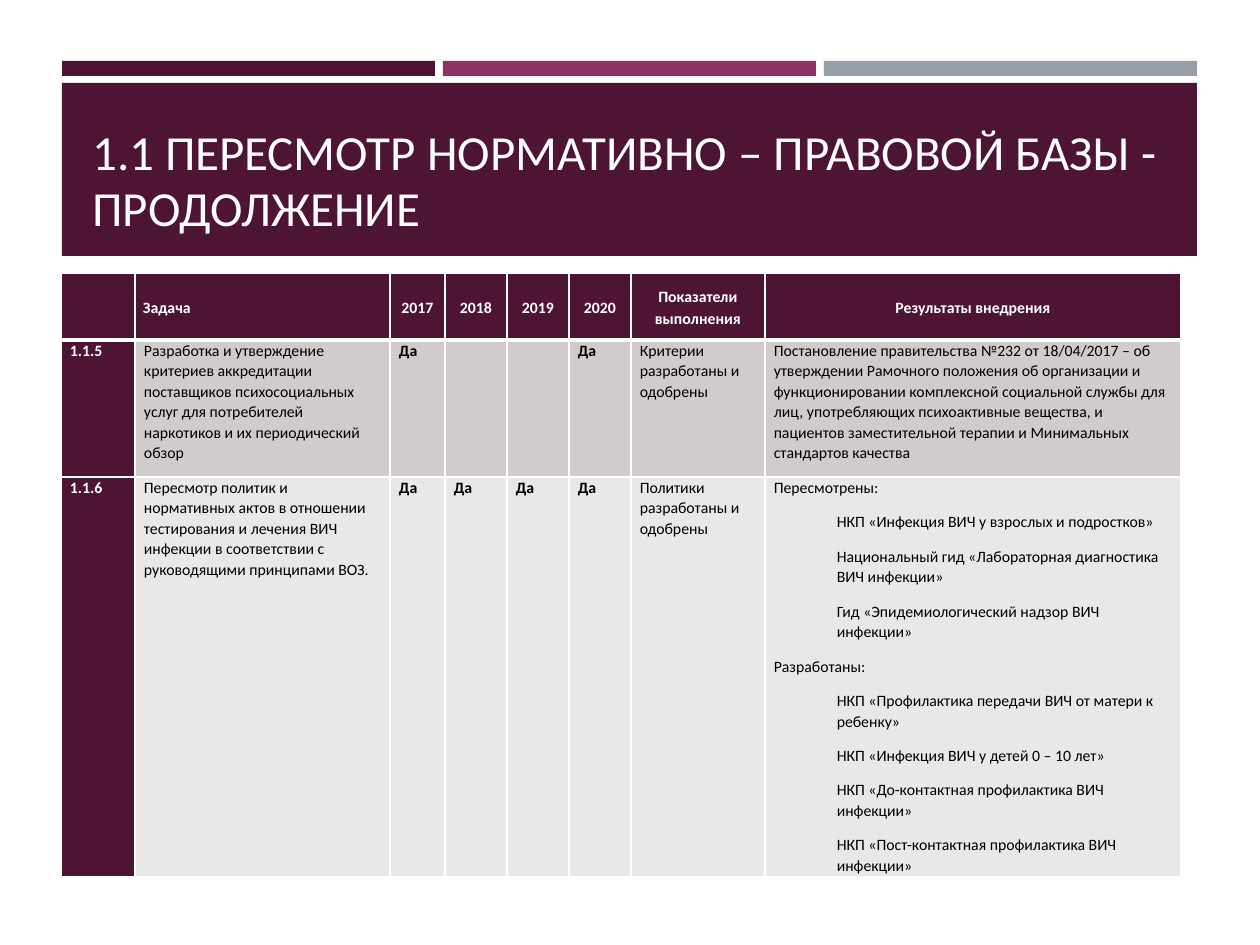
from dataclasses import dataclass

from lxml.etree import SubElement
from pptx import Presentation
from pptx.dml.color import RGBColor
from pptx.enum.shapes import MSO_SHAPE as Shape
from pptx.enum.text import MSO_ANCHOR as Anchor, PP_ALIGN as Align
from pptx.oxml.ns import qn
from pptx.util import Emu, Pt

PX = 914400 // 126


@dataclass(frozen=True)
class Theme:
    plum: str = "4D1434"
    magenta: str = "903163"
    grey: str = "969FA7"
    white: str = "FFFFFF"
    black: str = "000000"
    band_dark: str = "D0CCCE"
    band_light: str = "E9E7E8"
    font: str = "Calibri"
    title_size: int = 28
    table_size: int = 9


class SlideBuilder:
    """Draws themed elements on one slide, with lengths in px."""

    def __init__(self, theme, slide):
        self.theme = theme
        self.slide = slide

    def bar(self, left, top, width, height, color):
        bar = self.slide.shapes.add_shape(
            Shape.RECTANGLE, *(Emu(n * PX) for n in (left, top, width, height)))
        bar.shadow.inherit = False
        bar.fill.solid()
        bar.fill.fore_color.rgb = RGBColor.from_string(color)
        bar.line.fill.background()

    def style(self, paragraph, size, color, bold=False):
        paragraph.font.name = self.theme.font
        paragraph.font.size = Pt(size)
        paragraph.font.bold = bold
        paragraph.font.color.rgb = RGBColor.from_string(color)

    def title(self, left, top, width, height, text):
        box = self.slide.shapes.add_textbox(
            *(Emu(n * PX) for n in (left, top, width, height)))
        frame = box.text_frame
        frame.word_wrap = True
        frame.vertical_anchor = Anchor.BOTTOM
        heading = frame.paragraphs[0]
        heading.text = text
        heading.line_spacing = 0.95
        self.style(heading, self.theme.title_size, self.theme.white)

    def table(self, left, top, widths, heights, rows):
        table = self.slide.shapes.add_table(
            len(heights), len(widths), Emu(left * PX), Emu(top * PX),
            Emu(sum(widths) * PX), Emu(sum(heights) * PX)).table
        for column, width in zip(table.columns, widths):
            column.width = Emu(width * PX)
        for row, height in zip(table.rows, heights):
            row.height = Emu(height * PX)
        for r, row in enumerate(rows):
            for c, content in enumerate(row):
                self.cell(table.cell(r, c), r, c, content)

    def cell(self, cell, r, c, content):
        theme = self.theme
        header, label = r == 0, c == 0
        fill = theme.plum if header or label else (
            theme.band_dark if r % 2 else theme.band_light)
        cell.fill.solid()
        cell.fill.fore_color.rgb = RGBColor.from_string(fill)
        cell.margin_left = cell.margin_right = Emu((8 if header and c == 1 else 9) * PX)
        cell.margin_top = cell.margin_bottom = 0
        cell.vertical_anchor = Anchor.MIDDLE if header else Anchor.TOP
        self.borders(cell, top=3 if r == 1 else 1, bottom=3 if header else 1)
        lines = content if isinstance(content, list) else [content]
        for n, line in enumerate(lines):
            frame = cell.text_frame
            paragraph = frame.add_paragraph() if n else frame.paragraphs[0]
            paragraph.text = line
            paragraph.line_spacing = 1.15 if header else 1.07
            paragraph.space_after = Pt(0 if header or label else 8)
            if header and c > 1:
                paragraph.alignment = Align.CENTER
            if len(lines) > 1 and not line.endswith(":"):
                paragraph.level = 1
                properties = paragraph._p.get_or_add_pPr()
                properties.set("marL", str(63 * PX))
                properties.set("indent", "0")
            self.style(paragraph, theme.table_size,
                       theme.white if header or label else theme.black,
                       header or label or line == "Да")

    def borders(self, cell, top, bottom):
        properties = cell._tc.get_or_add_tcPr()
        sides = (("L", 1), ("R", 1), ("T", top), ("B", bottom))
        for n, (side, width) in enumerate(sides):
            edge = SubElement(properties, qn(f"a:ln{side}"), w=str(Pt(width)))
            color = SubElement(edge, qn("a:solidFill"))
            SubElement(color, qn("a:srgbClr"), val=self.theme.white)
            properties.insert(n, edge)


HEADER = ["", "Задача", "2017", "2018", "2019", "2020",
          "Показатели выполнения", "Результаты внедрения"]
ACCREDITATION = [
    "1.1.5",
    "Разработка и утверждение критериев аккредитации поставщиков психосоциальных "
    "услуг для потребителей наркотиков и их периодический обзор",
    "Да", "", "", "Да",
    "Критерии разработаны и одобрены",
    "Постановление правительства №232 от 18/04/2017 – об утверждении Рамочного "
    "положения об организации и функционировании комплексной социальной службы "
    "для лиц, употребляющих психоактивные вещества, и пациентов заместительной "
    "терапии и Минимальных стандартов качества",
]
POLICIES = [
    "1.1.6",
    "Пересмотр политик и нормативных актов в отношении тестирования и лечения ВИЧ "
    "инфекции в соответствии с руководящими принципами ВОЗ.",
    "Да", "Да", "Да", "Да",
    "Политики разработаны и одобрены",
    ["Пересмотрены:",
     "НКП «Инфекция ВИЧ у взрослых и подростков»",
     "Национальный гид «Лабораторная диагностика ВИЧ инфекции»",
     "Гид «Эпидемиологический надзор ВИЧ инфекции»",
     "Разработаны:",
     "НКП «Профилактика передачи ВИЧ от матери к ребенку»",
     "НКП «Инфекция ВИЧ у детей 0 – 10 лет»",
     "НКП «До-контактная профилактика ВИЧ инфекции»",
     "НКП «Пост-контактная профилактика ВИЧ инфекции»"],
]


def main():
    theme = Theme()
    deck = Presentation()
    deck.slide_width, deck.slide_height = Emu(1260 * PX), Emu(945 * PX)
    builder = SlideBuilder(theme, deck.slides.add_slide(deck.slide_layouts[6]))
    for n, color in enumerate((theme.plum, theme.magenta, theme.grey)):
        builder.bar(62 + n * 381, 61, 373, 15, color)
    builder.bar(62, 83, 1135, 173, theme.plum)
    builder.title(80, 95, 1101, 149,
                  "1.1 ПЕРЕСМОТР НОРМАТИВНО – ПРАВОВОЙ БАЗЫ - ПРОДОЛЖЕНИЕ")
    builder.table(61, 273, [74, 255, 55, 62, 62, 62, 134, 416], [67, 137, 400],
                  [HEADER, ACCREDITATION, POLICIES])
    deck.save("out.pptx")


if __name__ == "__main__":
    main()
